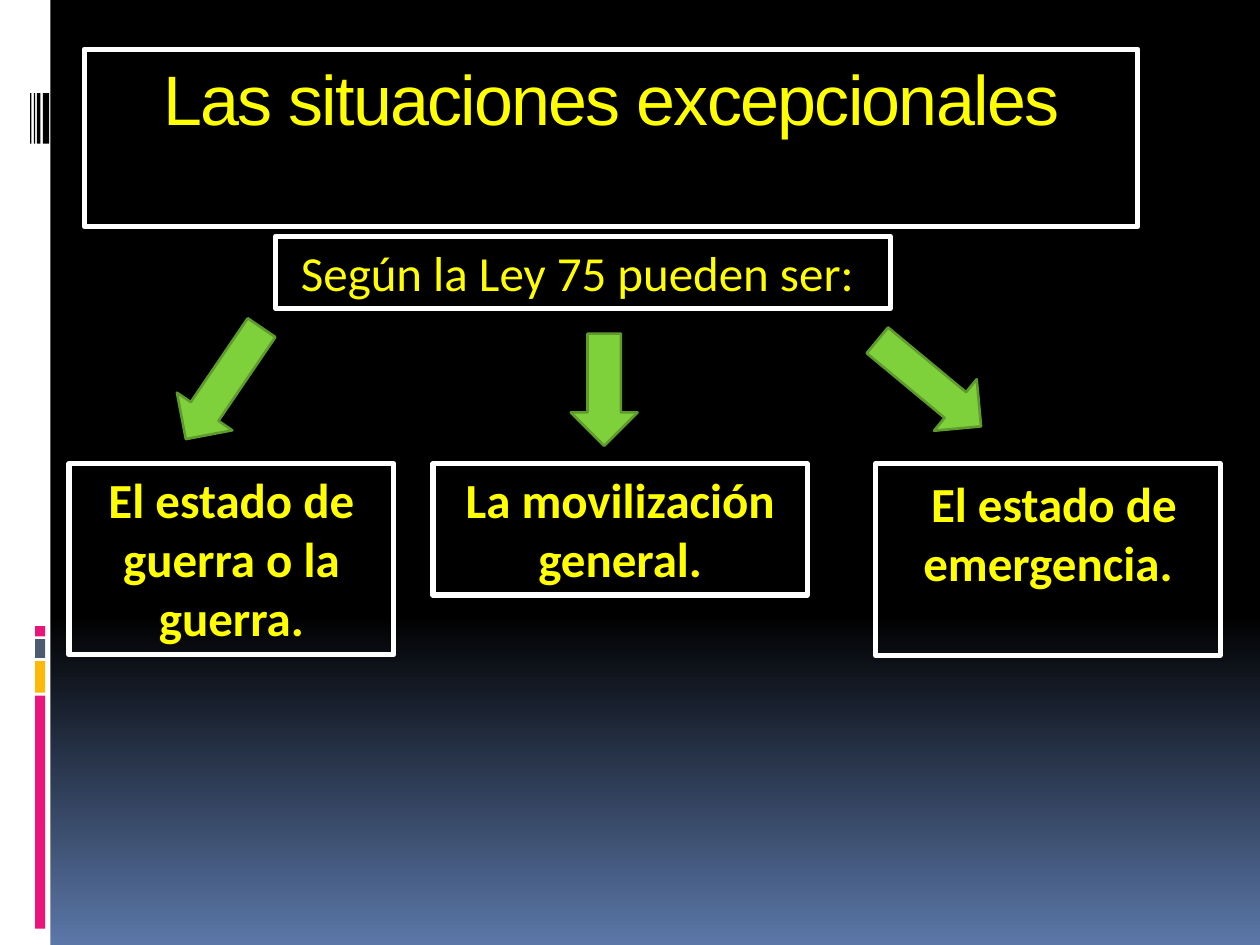
from dataclasses import dataclass

from pptx import Presentation
from pptx.dml.color import RGBColor
from pptx.enum import shapes, text
from pptx.util import Pt

WHITE, BLACK, YELLOW = "FFFFFF", "000000", "FFFF00"
PINK, AMBER, SLATE = "EA157A", "FEB80A", "4E5B6F"
GREEN, DARK_GREEN = "7FD13B", "5E9B2C"


@dataclass
class Bar:
    left: float
    top: float
    width: float
    height: float
    color: str


@dataclass
class Statement:
    wording: str
    left: float
    top: float
    width: float
    height: float
    bold: bool = True
    grows: bool = True
    lead_size: float = 0  # size of a leading space, if there is one


@dataclass
class Arrow:
    left: float
    top: float
    width: float
    rotation: float


BARCODE_TOP, BARCODE_HEIGHT = 53.3, 28.8
STRIPE_LEFT, STRIPE_WIDTH = 20, 5.8

BARS = [
    Bar(0, 0, 28.8, 540, WHITE),
    *(Bar(STRIPE_LEFT, top, STRIPE_WIDTH, height, color)
      for top, height, color in [(397.5, 133.2, PINK), (377.8, 18, AMBER),
                                 (365.2, 10.8, SLATE), (357.8, 5.8, PINK)]),
    *(Bar(left, BARCODE_TOP, width, BARCODE_HEIGHT, BLACK)
      for left, width in [(24.5, 3.6), (21.1, 2), (19.4, 0.75), (17.3, 0.75)]),
]

ANSWER_TOP = 265
STATEMENTS = [
    Statement("El estado de emergencia.", 500.4, ANSWER_TOP, 196.9, 109.4,
              grows=False, lead_size=30),
    Statement("Según la Ley 75 pueden ser: ", 157.5, 135, 351.2, 41.2, bold=False),
    Statement("El estado de guerra o la guerra.", 39.4, ANSWER_TOP, 185.6, 109.1),
    Statement("La movilización general.", 247.5, ANSWER_TOP, 213.8, 75.1),
]

ARROW_HEIGHT = 38.2
ARROWS = [
    Arrow(89.3, 200, 77, 124.2),
    Arrow(313.2, 203.6, 64.1, 90),
    Arrow(492.5, 200, 77, 39.7),
]


def rgb(color: str) -> RGBColor:
    return RGBColor.from_string(color)


def apply_format(target, values: dict) -> None:
    for name, value in values.items():
        setattr(target, name, value)


def outline(shape, color: str, width: float) -> None:
    shape.line.color.rgb = rgb(color)
    shape.line.width = Pt(width)


def add_run(paragraph, wording: str, font: str, size: float, bold: bool):
    run = paragraph.add_run()
    run.text = wording
    apply_format(run.font, {"name": font, "size": Pt(size), "bold": bold})
    run.font.color.rgb = rgb(YELLOW)
    return run


def paint_background(slide) -> None:
    """Black down to 65 % of the height, then fading to blue."""
    fill = slide.background.fill
    fill.gradient()
    fill.gradient_angle = 270
    for stop, position, color in zip(fill.gradient_stops, (0.65, 1), (BLACK, "5B77A8")):
        stop.position = position
        stop.color.rgb = rgb(color)


def add_solid(slide, preset, left: float, top: float, width: float, height: float,
              color: str):
    shape = slide.shapes.add_shape(preset, Pt(left), Pt(top), Pt(width), Pt(height))
    shape.shadow.inherit = False
    shape.fill.solid()
    shape.fill.fore_color.rgb = rgb(color)
    shape.line.fill.background()
    return shape


def add_bar(slide, bar: Bar) -> None:
    add_solid(slide, shapes.MSO_SHAPE.RECTANGLE, bar.left, bar.top, bar.width,
              bar.height, bar.color)


def add_arrow(slide, arrow: Arrow) -> None:
    shape = add_solid(slide, shapes.MSO_SHAPE.RIGHT_ARROW, arrow.left, arrow.top,
                      arrow.width, ARROW_HEIGHT, GREEN)
    outline(shape, DARK_GREEN, 1.5)
    shape.rotation = arrow.rotation


def place_title(slide, wording: str) -> None:
    title = slide.shapes.title
    apply_format(title, {"left": Pt(48.2), "top": Pt(28.1),
                         "width": Pt(602), "height": Pt(101.3)})
    outline(title, WHITE, 3)
    apply_format(title.text_frame, {"word_wrap": True,
                                    "auto_size": text.MSO_AUTO_SIZE.NONE,
                                    "vertical_anchor": text.MSO_ANCHOR.TOP})
    paragraph = title.text_frame.paragraphs[0]
    paragraph.alignment = text.PP_ALIGN.CENTER
    run = add_run(paragraph, wording, "Arial", 40, False)
    run.font._element.set("spc", "-100")


def add_statement(slide, statement: Statement) -> None:
    box = slide.shapes.add_textbox(Pt(statement.left), Pt(statement.top),
                                   Pt(statement.width), Pt(statement.height))
    outline(box, WHITE, 3)
    sizing = text.MSO_AUTO_SIZE
    apply_format(box.text_frame, {
        "word_wrap": True,
        "auto_size": sizing.SHAPE_TO_FIT_TEXT if statement.grows else sizing.NONE,
        "vertical_anchor": text.MSO_ANCHOR.TOP,
    })
    paragraph = box.text_frame.paragraphs[0]
    paragraph.alignment = text.PP_ALIGN.CENTER
    if statement.lead_size:
        add_run(paragraph, " ", "Calibri", statement.lead_size, statement.bold)
    add_run(paragraph, statement.wording, "Calibri", 28, statement.bold)


def main() -> None:
    presentation = Presentation()
    apply_format(presentation, {"slide_width": Pt(720), "slide_height": Pt(540)})
    slide = presentation.slides.add_slide(presentation.slide_layouts[5])
    paint_background(slide)
    for bar in BARS:
        add_bar(slide, bar)
    place_title(slide, "Las situaciones excepcionales")
    for statement in STATEMENTS:
        add_statement(slide, statement)
    for arrow in ARROWS:
        add_arrow(slide, arrow)
    presentation.save("out.pptx")


if __name__ == "__main__":
    main()
